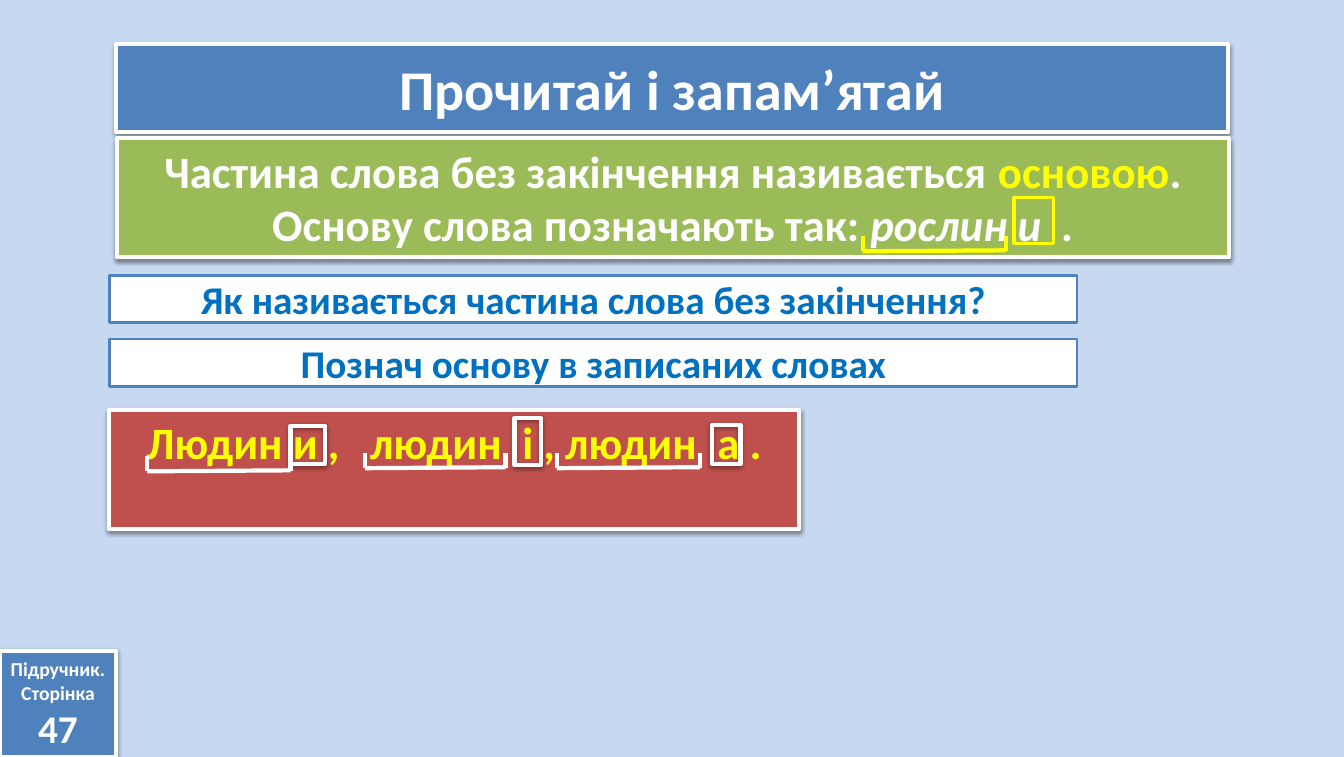
from dataclasses import dataclass
from lxml import etree
from pptx import Presentation
from pptx import util as u
from pptx.dml.color import RGBColor
from pptx.enum import shapes, text
from pptx.oxml import parse_xml
from pptx.oxml.ns import nsdecls, qn


@dataclass(frozen=True)
class Theme:
    font: str = "Calibri"
    page: str = "C6D9F1"
    blue: str = "4F81BD"
    green: str = "9BBB59"
    red: str = "C0504D"
    white: str = "FFFFFF"
    yellow: str = "FFFF00"
    question: str = "0070C0"
    title_size: int = 40
    rule_size: int = 32
    question_size: int = 28
    label_size: int = 14


SHADOW = (
    f'<a:outerShdw {nsdecls("a")} blurRad="39370" dist="20320" dir="5400000" '
    'rotWithShape="0"><a:srgbClr val="000000"><a:alpha val="38000"/>'
    '</a:srgbClr></a:outerShdw>'
)


def color(value):
    return RGBColor.from_string(value)


class SlideBuilder:
    def __init__(self, deck, theme):
        self.theme = theme
        self.page = deck.slides.add_slide(deck.slide_layouts[6])
        background = self.page.background.fill
        background.solid()
        background.fore_color.rgb = color(theme.page)

    def box(self, left, top, width, height, fill=None, line=None, weight=3, shadow=True):
        box = self.page.shapes.add_shape(
            shapes.MSO_SHAPE.RECTANGLE, u.Pt(left), u.Pt(top), u.Pt(width), u.Pt(height))
        box.shadow.inherit = False
        if shadow:
            box._element.spPr.find(qn("a:effectLst")).append(parse_xml(SHADOW))
        if fill:
            box.fill.solid()
            box.fill.fore_color.rgb = color(fill)
        else:
            box.fill.background()
        box.line.color.rgb = color(line or self.theme.white)
        box.line.width = u.Pt(weight)
        return box

    def label(self, box, paragraphs, size, ink=None, anchor=text.MSO_ANCHOR.MIDDLE):
        frame = box.text_frame
        settings = {"word_wrap": True, "vertical_anchor": anchor}
        for name, value in settings.items():
            setattr(frame, name, value)
        for index, spans in enumerate(paragraphs):
            para = frame.add_paragraph() if index else frame.paragraphs[0]
            para.alignment = text.PP_ALIGN.CENTER
            for words, changes in spans:
                self.span(para, words, {"size": size, "ink": ink or self.theme.white, **changes})

    def span(self, para, words, style):
        span = para.add_run()
        span.text = words
        values = {
            "name": self.theme.font,
            "size": u.Pt(style["size"]),
            "bold": True,
            "italic": style.get("italic", False),
        }
        for name, value in values.items():
            setattr(span.font, name, value)
        span.font.color.rgb = color(style["ink"])
        if "spacing" in style:
            span._r.get_or_add_rPr().set("spc", str(style["spacing"]))

    def stem(self, left, right, bottom, ink, grouped=False):
        owner = self.page.shapes.add_group_shape().shapes if grouped else self.page.shapes
        tick = bottom - 10.8
        strokes = [
            (left, bottom, right, bottom - 0.72),
            (left, bottom, left, tick),
            (right, bottom, right, tick),
        ]
        for ends in strokes:
            stroke = owner.add_connector(
                shapes.MSO_CONNECTOR.STRAIGHT, *(u.Pt(value) for value in ends))
            stroke.line.color.rgb = color(ink)
            stroke.line.width = u.Pt(3)
            etree.SubElement(stroke._element.spPr, qn("a:effectLst"))


def main():
    theme = Theme()
    deck = Presentation()
    deck.slide_width, deck.slide_height = u.Pt(959.04), u.Pt(540)
    slide = SlideBuilder(deck, theme)
    top_anchor = text.MSO_ANCHOR.TOP

    title = slide.box(82.8, 31.68, 793.44, 62.64, theme.blue)
    slide.label(title, [[("Прочитай і запам’ятай", {})]], theme.title_size)

    textbook = slide.box(0, 464.4, 82.8, 75.6, theme.blue)
    slide.label(textbook, [
        [("Підручник.", {})],
        [("Сторінка", {})],
        [("47", {"size": theme.question_size})],
    ], theme.label_size)

    questions = [
        (196.56, "Як називається частина слова без закінчення?"),
        (241.92, "Познач основу в записаних словах"),
    ]
    for top, words in questions:
        question = slide.box(78, top, 690.48, 33.84, theme.white, theme.blue, 2, False)
        slide.label(question, [[(words, {})]], theme.question_size, theme.question)

    double, triple = {"spacing": 720}, {"spacing": 1440}
    answer = slide.box(77.76, 292.32, 492.48, 84.96, theme.red)
    slide.label(answer, [[
        ("Людин и ,", {}), (" ", triple),
        ("людин", {}), (" ", double),
        ("і , людин", {}), (" ", double),
        ("а .", {}),
    ]], theme.rule_size, theme.yellow, top_anchor)

    endings = [
        (508.32, 303.12, 20.16, 28.08),
        (367.2, 298.08, 18.72, 33.84),
        (207.36, 303.84, 24.48, 27.36),
    ]
    for ending in endings:
        slide.box(*ending)

    rule = slide.box(83.52, 98.64, 793.44, 84.96, theme.green)
    italic = {"italic": True}
    slide.label(rule, [[
        ("Частина слова без закінчення називається ", {}),
        ("основою", {"ink": theme.yellow}),
        (". Основу слова позначають так: ", {}),
        ("рослин и", italic), (" ", {**italic, **double}), (".", italic),
    ]], theme.rule_size, anchor=top_anchor)
    slide.box(723.6, 141.12, 28.08, 32.4, line=theme.yellow, weight=2.25, shadow=False)
    slide.stem(615.6, 717.84, 179.28, theme.yellow, grouped=True)

    for left, right, bottom in [(105.12, 207.36, 336.24), (260.64, 360.72, 334), (397.44, 499.68, 334)]:
        slide.stem(left, right, bottom, theme.white)

    deck.save("out.pptx")


if __name__ == "__main__":
    main()
